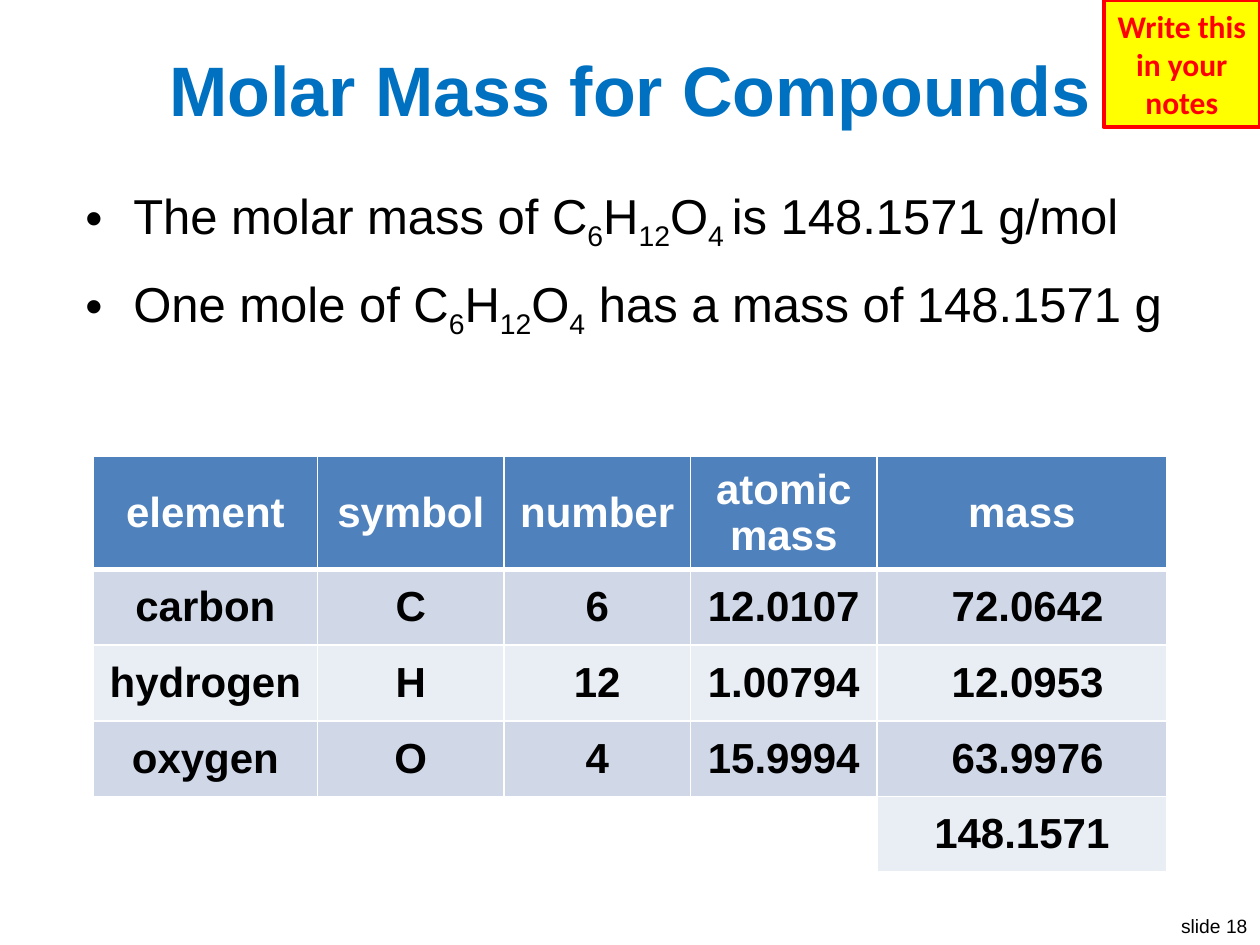
from dataclasses import dataclass

from lxml import etree
from pptx import Presentation
from pptx.dml.color import RGBColor
from pptx.enum.shapes import MSO_SHAPE
from pptx.enum.text import MSO_ANCHOR, PP_ALIGN
from pptx.oxml.ns import qn
from pptx.util import Inches, Pt

RECTANGLE = MSO_SHAPE.RECTANGLE
MIDDLE = MSO_ANCHOR.MIDDLE
LEFT, CENTER, RIGHT = PP_ALIGN.LEFT, PP_ALIGN.CENTER, PP_ALIGN.RIGHT


@dataclass(frozen=True)
class Theme:
    font: str = "Arial"
    note_font: str = "Calibri"
    black: str = "000000"
    white: str = "FFFFFF"
    title: str = "0070C0"
    header: str = "4F81BD"
    bands: tuple = ("D0D8E8", "E9EDF4")
    note_fill: str = "FFFF00"
    note_ink: str = "FF0000"
    title_size: int = 40
    body_size: int = 28
    table_size: int = 24
    note_size: int = 18
    footer_size: int = 11


theme = Theme()


def write(para, text, *, size, color=theme.black, font=theme.font, bold=False, align=LEFT):
    """Fill a paragraph; parts between underscores become subscripts."""
    para.alignment = align
    for index, part in enumerate(text.split("_")):
        if not part:
            continue
        span = para.add_run()
        span.text = part
        span.font.name = font
        span.font.size = Pt(size)
        span.font.bold = bold
        span.font.color.rgb = RGBColor.from_string(color)
        if index % 2:
            span.font._element.set("baseline", "-25000")


def add_border(cell, side, width):
    line = etree.SubElement(cell._tc.get_or_add_tcPr(), qn(f"a:ln{side}"), w=str(Pt(width)))
    fill = etree.SubElement(line, qn("a:solidFill"))
    etree.SubElement(fill, qn("a:srgbClr"), val=theme.white)


deck = Presentation()
deck.slide_width, deck.slide_height = Inches(10), Inches(7.5)
page = deck.slides.add_slide(deck.slide_layouts[5])

# Slide number
footer = page.shapes.add_textbox(Inches(9.25), Inches(7.21), Inches(0.75), Inches(0.29))
footer.text_frame.word_wrap = False
write(footer.text_frame.paragraphs[0], "slide 18", size=theme.footer_size, align=RIGHT)

# Title
title = page.shapes.title
title.left, title.top = Inches(0.2), Inches(0.3)
title.width, title.height = Inches(9.6), Inches(0.8)
title.text_frame.vertical_anchor = MIDDLE
write(title.text_frame.paragraphs[0], "Molar Mass for Compounds",
      size=theme.title_size, color=theme.title, bold=True, align=CENTER)

# Statements
statements = [
    "The molar mass of C_6_H_12_O_4 _is 148.1571 g/mol",
    "One mole of C_6_H_12_O_4_ has a mass of 148.1571 g",
]
body = page.shapes.add_textbox(Inches(0.58), Inches(1.42), Inches(8.85), Inches(2.01))
body.text_frame.word_wrap = True
for index, statement in enumerate(statements):
    para = body.text_frame.paragraphs[0] if index == 0 else body.text_frame.add_paragraph()
    para.space_before = Pt(12)
    write(para, statement, size=theme.body_size)
    properties = para._p.get_or_add_pPr()
    properties.set("marL", str(Inches(0.38)))
    properties.set("indent", str(-Inches(0.38)))
    etree.SubElement(properties, qn("a:buFont"), typeface=theme.font)
    etree.SubElement(properties, qn("a:buChar"), char="•")

# Molar mass table
rows = [
    ["element", "symbol", "number", "atomic mass", "mass"],
    ["carbon", "C", "6", "12.0107", " 72.0642"],
    ["hydrogen", "H", "12", "1.00794", " 12.0953"],
    ["oxygen", "O", "4", "15.9994", " 63.9976"],
    ["", "", "", "", "148.1571"],
]
column_widths = [1.78, 1.48, 1.48, 1.48, 2.3]
row_heights = [0.84] + [0.6] * 4
table = page.shapes.add_table(
    len(rows), len(column_widths), Inches(0.74), Inches(3.62),
    Inches(sum(column_widths)), Inches(sum(row_heights))).table
for column, width in zip(table.columns, column_widths):
    column.width = Inches(width)
for row, height in zip(table.rows, row_heights):
    row.height = Inches(height)

for row_index, row in enumerate(rows):
    is_header = row_index == 0
    fill_color = theme.header if is_header else theme.bands[(row_index - 1) % 2]
    for column_index, text in enumerate(row):
        cell = table.cell(row_index, column_index)
        cell.vertical_anchor = MIDDLE
        for side in "LRTB":
            thick = (is_header and side == "B") or (row_index == 1 and side == "T")
            add_border(cell, side, 3 if thick else 1)
        if not text:
            cell.fill.background()
            continue
        cell.fill.solid()
        cell.fill.fore_color.rgb = RGBColor.from_string(fill_color)
        write(cell.text_frame.paragraphs[0], text, size=theme.table_size, bold=True,
              color=theme.white if is_header else theme.black, align=CENTER)

# Reminder in the corner
note = page.shapes.add_shape(RECTANGLE, Inches(8.76), 0, Inches(1.24), Inches(1.01))
note.shadow.inherit = False
note.fill.solid()
note.fill.fore_color.rgb = RGBColor.from_string(theme.note_fill)
note.line.color.rgb = RGBColor.from_string(theme.note_ink)
note.line.width = Pt(2.25)
note.text_frame.word_wrap = True
write(note.text_frame.paragraphs[0], "Write this in your notes", size=theme.note_size,
      color=theme.note_ink, font=theme.note_font, bold=True, align=CENTER)

deck.save("out.pptx")
